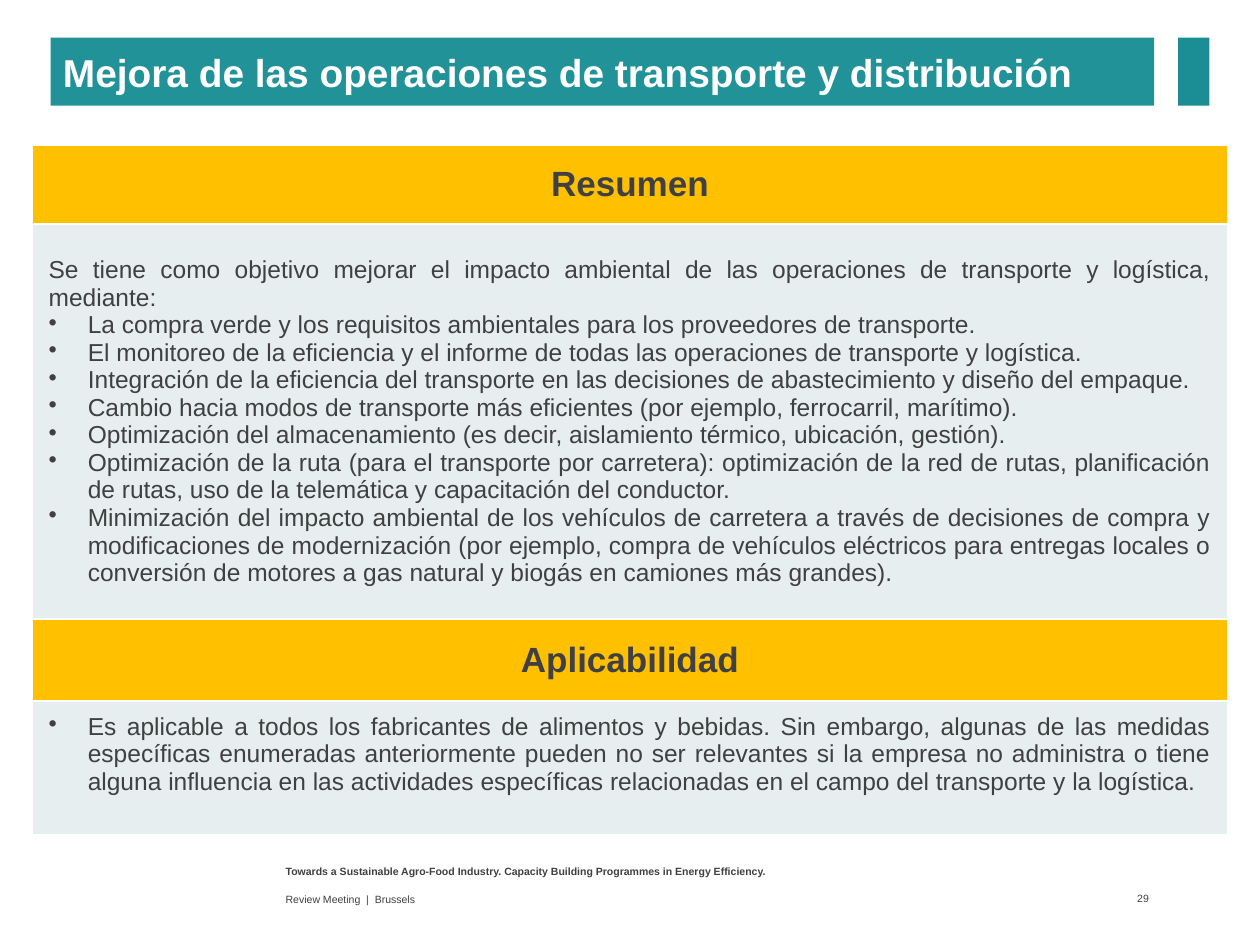
import pptx
import pptx.dml.color
import pptx.enum.shapes
import pptx.enum.text
import pptx.oxml
import pptx.util
from pptx.dml.color import RGBColor
from pptx.enum.text import MSO_ANCHOR, PP_ALIGN
from pptx.util import Cm, Pt

TEAL = RGBColor(0x20, 0x92, 0x98)
DARK_TEAL = RGBColor(0x1B, 0x8E, 0x95)
AMBER = RGBColor(0xFF, 0xC0, 0x00)
PALE = RGBColor(0xE7, 0xEE, 0xEF)
GREY = RGBColor(0x40, 0x40, 0x40)
WHITE = RGBColor(0xFF, 0xFF, 0xFF)

SUMMARY_INTRO = (
    "Se tiene como objetivo mejorar el impacto ambiental de las operaciones "
    "de transporte y logística, mediante:"
)
SUMMARY_BULLETS = [
    "La compra verde y los requisitos ambientales para los proveedores de transporte.",
    "El monitoreo de la eficiencia y el informe de todas las operaciones de transporte y logística.",
    "Integración de la eficiencia del transporte en las decisiones de abastecimiento y diseño del empaque.",
    "Cambio hacia modos de transporte más eficientes (por ejemplo, ferrocarril, marítimo).",
    "Optimización del almacenamiento (es decir, aislamiento térmico, ubicación, gestión).",
    "Optimización de la ruta (para el transporte por carretera): optimización de la red de rutas, "
    "planificación de rutas, uso de la telemática y capacitación del conductor.",
    "Minimización del impacto ambiental de los vehículos de carretera a través de decisiones de compra "
    "y modificaciones de modernización (por ejemplo, compra de vehículos eléctricos para entregas "
    "locales o conversión de motores a gas natural y biogás en camiones más grandes).",
]
APPLICABILITY_BULLETS = [
    "Es aplicable a todos los fabricantes de alimentos y bebidas. Sin embargo, algunas de las medidas "
    "específicas enumeradas anteriormente pueden no ser relevantes si la empresa no administra o tiene "
    "alguna influencia en las actividades específicas relacionadas en el campo del transporte y la logística.",
]


class SlideBuilder:
    def __init__(self, slide, font_name="Arial"):
        self.slide = slide
        self.font_name = font_name

    def style(self, paragraph, size, color=GREY, bold=False, align=PP_ALIGN.LEFT):
        paragraph.alignment = align
        font = paragraph.font
        font.name, font.size, font.bold = self.font_name, Pt(size), bold
        font.color.rgb = color

    def bar(self, left, width, color, text=""):
        shape = self.slide.shapes.add_shape(
            pptx.enum.shapes.MSO_SHAPE.RECTANGLE, Cm(left), Cm(0.76), Cm(width), Cm(1.37)
        )
        shape.shadow.inherit = False
        shape.fill.solid()
        shape.fill.fore_color.rgb = color
        shape.line.fill.background()
        if text:
            frame = shape.text_frame
            frame.vertical_anchor = MSO_ANCHOR.MIDDLE
            frame.text = text
            self.style(frame.paragraphs[0], 22.2, WHITE, bold=True)

    def footer(self, left, top, width, height, text, anchor=MSO_ANCHOR.MIDDLE,
               bold=False, align=PP_ALIGN.LEFT, right_margin=0.25):
        box = self.slide.shapes.add_textbox(Cm(left), Cm(top), Cm(width), Cm(height))
        frame = box.text_frame
        frame.word_wrap = True
        frame.vertical_anchor = anchor
        frame.margin_right = Cm(right_margin)
        frame.text = text
        self.style(frame.paragraphs[0], 6, bold=bold, align=align)

    def section(self, top, heights, heading, bullets, intro=None, bottom_margin=0.15):
        """Add a one-column table: a heading row above a row of text."""
        table = self.slide.shapes.add_table(
            2, 1, Cm(0.66), Cm(top), Cm(24.08), Cm(sum(heights))
        ).table
        for row, height in zip(table.rows, heights):
            row.height = Cm(height)
        heading_cell, body_cell = table.cell(0, 0), table.cell(1, 0)

        heading_cell.text = heading
        self.style(heading_cell.text_frame.paragraphs[0], 20, bold=True, align=PP_ALIGN.CENTER)

        body_cell.margin_left = body_cell.margin_right = Cm(0.32)
        body_cell.margin_top, body_cell.margin_bottom = Cm(0.15), Cm(bottom_margin)
        lines = ([intro] if intro else []) + bullets
        body_cell.text = "\n".join(lines)
        for line, paragraph in zip(lines, body_cell.text_frame.paragraphs):
            if line != intro:
                self.add_bullet(paragraph)
            self.style(paragraph, 14, align=PP_ALIGN.JUSTIFY)

        for cell, color in ((heading_cell, AMBER), (body_cell, PALE)):
            cell.vertical_anchor = MSO_ANCHOR.MIDDLE
            self.add_borders(cell)
            cell.fill.solid()
            cell.fill.fore_color.rgb = color

    def add_bullet(self, paragraph):
        properties = paragraph._p.get_or_add_pPr()
        indent = Cm(0.79)
        properties.set("marL", str(indent))
        properties.set("indent", str(-indent))
        bullet = pptx.oxml.parse_xml(
            f'<a:buChar xmlns:a="{pptx.oxml.ns.nsuri("a")}" char="•"/>'
        )
        properties.append(bullet)

    def add_borders(self, cell):
        properties = cell._tc.get_or_add_tcPr()
        for side in ("lnL", "lnR", "lnT", "lnB"):
            properties.append(pptx.oxml.parse_xml(
                f'<a:{side} xmlns:a="{pptx.oxml.ns.nsuri("a")}" w="{Pt(1)}">'
                f'<a:solidFill><a:srgbClr val="{WHITE}"/></a:solidFill></a:{side}>'
            ))


def main():
    presentation = pptx.Presentation()
    presentation.slide_width, presentation.slide_height = Cm(25.4), Cm(19.05)
    builder = SlideBuilder(presentation.slides.add_slide(presentation.slide_layouts[6]))

    builder.footer(
        5.51, 17.32, 13.97, 0.53,
        "Towards a Sustainable Agro-Food Industry. Capacity Building Programmes in Energy Efficiency.",
        anchor=MSO_ANCHOR.TOP, bold=True,
    )
    builder.footer(5.51, 17.88, 13.97, 0.48, "Review Meeting  |  Brussels")
    builder.footer(21.84, 17.86, 1.42, 0.5, "29", align=PP_ALIGN.RIGHT, right_margin=0.1)

    builder.bar(1.02, 22.25, TEAL, "Mejora de las operaciones de transporte y distribución")
    builder.bar(23.75, 0.63, DARK_TEAL)

    builder.section(2.92, (1.6, 7.96), "Resumen", SUMMARY_BULLETS, intro=SUMMARY_INTRO)
    builder.section(12.48, (1.65, 2.69), "Aplicabilidad", APPLICABILITY_BULLETS, bottom_margin=0.7)

    presentation.save("out.pptx")


if __name__ == "__main__":
    main()
